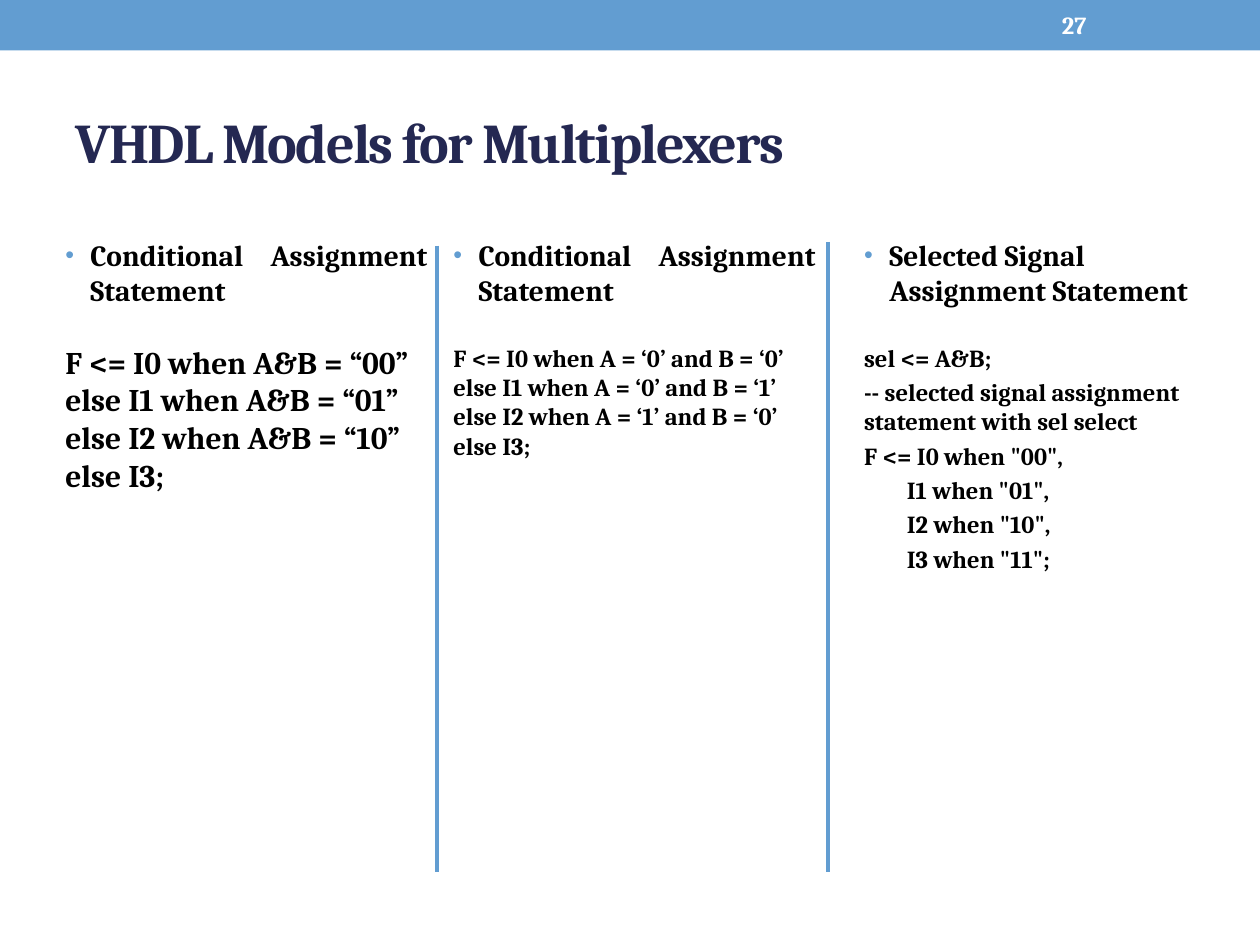
"""Builds the slide on VHDL models for multiplexers."""
from lxml.etree import SubElement
from pptx import Presentation
from pptx.dml.color import RGBColor
from pptx.enum.shapes import MSO_CONNECTOR, MSO_SHAPE
from pptx.enum.text import MSO_ANCHOR, PP_ALIGN
from pptx.oxml.ns import qn
from pptx.util import Inches, Pt

TITLE = "VHDL Models for Multiplexers"
PAGE = "27"
COLUMNS = [
    {"left": 0.42, "heading": "Conditional Assignment Statement",
     "align": PP_ALIGN.JUSTIFY, "size": 18,
     "code": [("F <= I0 when A&B = “00” else I1 when A&B = “01” "
               "else I2 when A&B = “10” else I3;", 0)]},
    {"left": 3.5, "heading": "Conditional Assignment Statement",
     "align": PP_ALIGN.JUSTIFY, "size": 14,
     "code": [("F <= I0 when A = ‘0’ and B = ‘0’ else I1 when A = ‘0’ and B = ‘1’ "
               "else I2 when A = ‘1’ and B = ‘0’ else I3;", 0)]},
    {"left": 6.76, "heading": "Selected Signal Assignment Statement",
     "align": PP_ALIGN.LEFT, "size": 14,
     "code": [("sel <= A&B;", 0),
              ("-- selected signal assignment statement with sel select", 0),
              ('F <= I0 when "00",', 0),
              ('I1 when "01",', 1),
              ('I2 when "10",', 1),
              ('I3 when "11";', 1)]},
]
DIVIDERS = [(6.57, 1.92), (3.47, 1.95)]
DIVIDER_BOTTOM = 6.92
COLUMN_WIDTH = 3.07
HEADING_TOP, HEADING_HEIGHT = 1.83, 0.7
CODE_TOP, CODE_HEIGHT = 2.67, 4.32
BULLET_INDENT, CODE_INDENT = 0.2, 0.34

THEME = {
    "font": "Cambria",
    "accent": RGBColor(0x62, 0x9D, 0xD1),
    "title": RGBColor(0x24, 0x28, 0x52),
    "text": RGBColor(0, 0, 0),
    "page": RGBColor(0xFF, 0xFF, 0xFF),
    "title_size": 32,
    "heading_size": 16.8,
    "page_size": 14,
    "divider_width": 2.25,
}


def add_text(slide, box, lines, size, color, anchor=MSO_ANCHOR.TOP):
    frame = slide.shapes.add_textbox(*map(Inches, box)).text_frame
    frame.word_wrap = True
    frame.vertical_anchor = anchor
    frame.text = "\n".join(lines)
    for paragraph in frame.paragraphs:
        font = paragraph.runs[0].font
        font.name, font.size, font.bold = THEME["font"], Pt(size), True
        font.color.rgb = color
    return frame.paragraphs


def add_space_before(paragraph):
    spacing = SubElement(paragraph._p.get_or_add_pPr(), qn("a:spcBef"))
    SubElement(spacing, qn("a:spcPct"), val="20000")


def add_bullet(paragraph):
    properties = paragraph._p.get_or_add_pPr()
    properties.set("marL", str(Inches(BULLET_INDENT)))
    properties.set("indent", str(-Inches(BULLET_INDENT)))
    bullet_color = SubElement(properties, qn("a:buClr"))
    SubElement(bullet_color, qn("a:srgbClr"), val=str(THEME["accent"]))
    SubElement(properties, qn("a:buSzPct"), val="85000")
    SubElement(properties, qn("a:buFont"), typeface="Arial")
    SubElement(properties, qn("a:buChar"), char="•")


def add_column(slide, column):
    heading = add_text(
        slide, (column["left"], HEADING_TOP, COLUMN_WIDTH, HEADING_HEIGHT),
        [column["heading"]], THEME["heading_size"], THEME["text"])[0]
    heading.alignment = column["align"]
    add_space_before(heading)
    add_bullet(heading)

    statements = add_text(
        slide, (column["left"], CODE_TOP, COLUMN_WIDTH, CODE_HEIGHT),
        [line for line, _ in column["code"]], column["size"], THEME["text"])
    for statement, (_, depth) in zip(statements, column["code"]):
        add_space_before(statement)
        statement._p.pPr.set("marL", str(Inches(CODE_INDENT * depth)))


def add_divider(slide, x, top):
    divider = slide.shapes.add_connector(
        MSO_CONNECTOR.STRAIGHT, *map(Inches, (x, top, x, DIVIDER_BOTTOM)))
    divider.line.color.rgb = THEME["accent"]
    divider.line.width = Pt(THEME["divider_width"])
    SubElement(divider._element.spPr, qn("a:effectLst"))


def main():
    deck = Presentation()
    deck.slide_width, deck.slide_height = Inches(10), Inches(7.5)
    slide = deck.slides.add_slide(deck.slide_layouts[6])

    banner = slide.shapes.add_shape(
        MSO_SHAPE.RECTANGLE, 0, 0, deck.slide_width, Inches(0.4))
    banner.shadow.inherit = False
    banner.fill.solid()
    banner.fill.fore_color.rgb = THEME["accent"]
    banner.line.fill.background()

    title = add_text(slide, (0.5, 0.58, 9, 1.08), [TITLE],
                     THEME["title_size"], THEME["title"], MSO_ANCHOR.MIDDLE)[0]
    title.runs[0]._r.get_or_add_rPr().set("spc", "-100")
    add_text(slide, (8.33, 0.02, 1.17, 0.36), [PAGE],
             THEME["page_size"], THEME["page"], MSO_ANCHOR.MIDDLE)

    for column in COLUMNS:
        add_column(slide, column)
    for x, top in DIVIDERS:
        add_divider(slide, x, top)
    deck.save("out.pptx")


if __name__ == "__main__":
    main()
